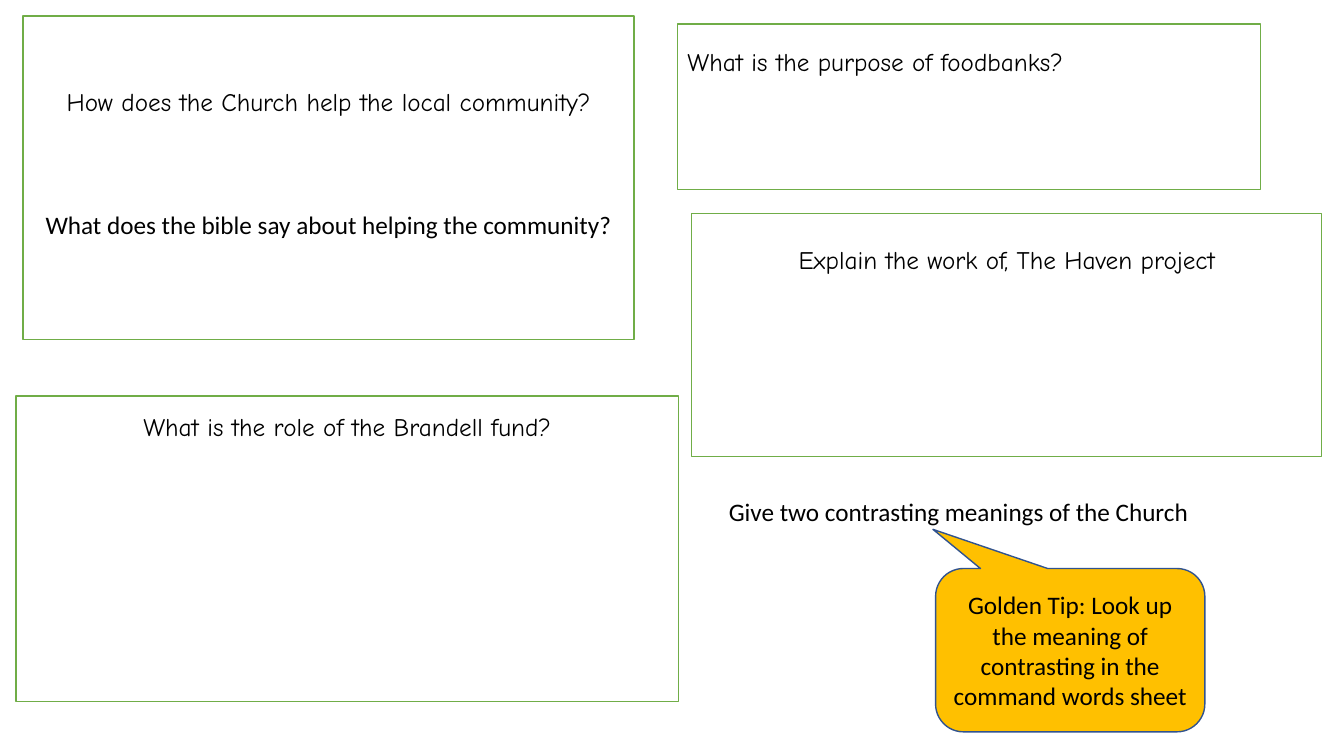
from dataclasses import dataclass

from pptx import Presentation
from pptx.dml.color import RGBColor
from pptx.enum import shapes, text
from pptx.util import Pt

PX = 9144  # EMU per px, at 100 px to the inch
GREEN, GOLD, NAVY, WHITE, BLACK = "70AD47", "FFC000", "31538F", "FFFFFF", "000000"
HAND, PLAIN = "Comic Neue", "Calibri"
LEFT, CENTER = text.PP_ALIGN.LEFT, text.PP_ALIGN.CENTER
TOP, MIDDLE = text.MSO_ANCHOR.TOP, text.MSO_ANCHOR.MIDDLE


@dataclass
class Line:
    words: str
    font: str = HAND
    before: int = 0  # points


@dataclass
class Panel:
    area: tuple[int, int, int, int]  # left, top, width, height
    lines: list[Line]
    inset_top: int = 5
    align: text.PP_ALIGN = CENTER
    anchor: text.MSO_ANCHOR = TOP
    kind: shapes.MSO_SHAPE = shapes.MSO_SHAPE.RECTANGLE
    fill: str = WHITE
    border: str = GREEN


def color(value: str) -> RGBColor:
    return RGBColor.from_string(value)


def write(box, lines: list[Line], align: text.PP_ALIGN) -> None:
    frame = box.text_frame
    frame.word_wrap = True
    for index, line in enumerate(lines):
        para = frame.add_paragraph() if index else frame.paragraphs[0]
        para.alignment = align
        if index:
            para.space_before = Pt(line.before)
        span = para.add_run()
        span.text = line.words
        span.font.name = line.font
        span.font.size = Pt(18)
        span.font.color.rgb = color(BLACK)


def draw_panel(page, panel: Panel):
    box = page.shapes.add_shape(panel.kind, *(n * PX for n in panel.area))
    box.shadow.inherit = False
    box.fill.solid()
    box.fill.fore_color.rgb = color(panel.fill)
    box.line.color.rgb = color(panel.border)
    box.line.width = Pt(1)
    box.text_frame.margin_top = panel.inset_top * PX
    box.text_frame.vertical_anchor = panel.anchor
    write(box, panel.lines, panel.align)
    return box


QUESTIONS = [
    Panel((23, 16, 606, 321), [
        Line("How does the Church help the local community?"),
        Line("What does the bible say about helping the community?", PLAIN, 66),
    ], inset_top=70),
    Panel((686, 212, 625, 241), [Line("Explain the work of, The Haven project")], inset_top=30),
    Panel((16, 393, 657, 303), [Line("What is the role of the Brandell fund?")], inset_top=15),
    Panel((672, 24, 578, 164), [Line("What is the purpose of foodbanks?")],
          inset_top=22, align=LEFT),
]
TIP = Panel(
    (928, 564, 267, 162),
    [Line("Golden Tip: Look up the meaning of contrasting in the command words sheet", PLAIN)],
    anchor=MIDDLE, kind=shapes.MSO_SHAPE.ROUNDED_RECTANGULAR_CALLOUT, fill=GOLD, border=NAVY,
)


def main() -> None:
    deck = Presentation()
    deck.slide_width, deck.slide_height = 1333 * PX, 750 * PX
    page = deck.slides.add_slide(deck.slide_layouts[6])

    # Question panels
    for panel in QUESTIONS:
        draw_panel(page, panel)

    # Tip callout, its tail pointing up at the last question
    callout = draw_panel(page, TIP)
    for index, value in enumerate((-0.51, -0.74, 0.17)):
        callout.adjustments[index] = value

    # Last question, without a frame
    box = page.shapes.add_textbox(*(n * PX for n in (713, 487, 597, 40)))
    write(box, [Line("Give two contrasting meanings of the Church", PLAIN)], LEFT)

    deck.save("out.pptx")


if __name__ == "__main__":
    main()
